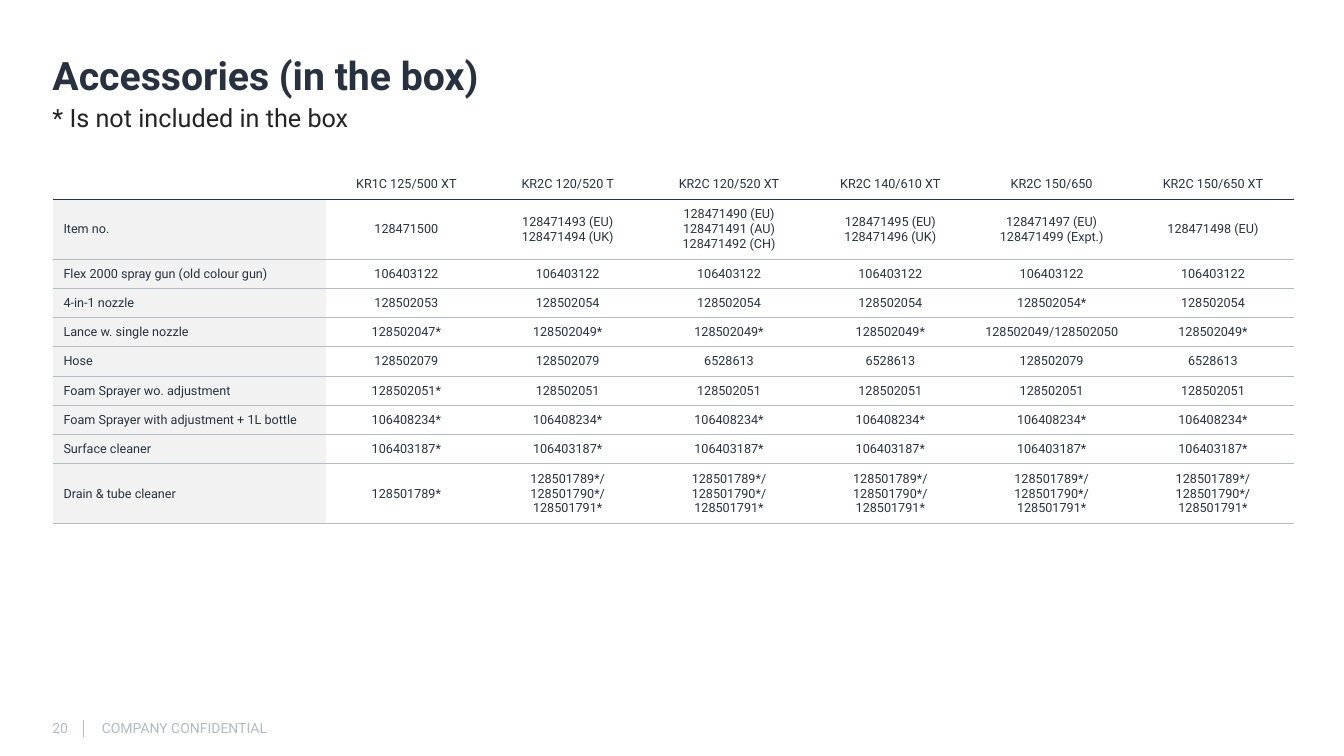
"""Build the slide listing the accessories delivered with each pressure washer."""
from dataclasses import dataclass

from lxml.etree import SubElement
from pptx import Presentation
from pptx.dml.color import RGBColor
from pptx.enum.shapes import MSO_CONNECTOR
from pptx.enum.text import MSO_ANCHOR, PP_ALIGN
from pptx.oxml.ns import qn
from pptx.util import Inches, Pt

TITLE = "Accessories (in the box)"
SUBTITLE = "* Is not included in the box"
PAGE = "20"
FOOTER = "COMPANY CONFIDENTIAL"

MODELS = ["KR1C 125/500 XT", "KR2C 120/520 T", "KR2C 120/520 XT",
          "KR2C 140/610 XT", "KR2C 150/650", "KR2C 150/650 XT"]
DRAIN_SET = "128501789*/\n128501790*/\n128501791*"
ACCESSORIES = [
    ("Item no.", ["128471500", "128471493 (EU)\n128471494 (UK)",
                  "128471490 (EU)\n128471491 (AU)\n128471492 (CH)",
                  "128471495 (EU)\n128471496 (UK)",
                  "128471497 (EU)\n128471499 (Expt.)", "128471498 (EU)"]),
    ("Flex 2000 spray gun (old colour gun)", ["106403122"] * 6),
    ("4-in-1 nozzle", ["128502053", "128502054", "128502054",
                       "128502054", "128502054*", "128502054"]),
    ("Lance w. single nozzle", ["128502047*", "128502049*", "128502049*",
                                "128502049*", "128502049/128502050", "128502049*"]),
    ("Hose", ["128502079", "128502079", "6528613", "6528613", "128502079", "6528613"]),
    ("Foam Sprayer wo. adjustment", ["128502051*"] + ["128502051"] * 5),
    ("Foam Sprayer with adjustment + 1L bottle", ["106408234*"] * 6),
    ("Surface cleaner", ["106403187*"] * 6),
    ("Drain & tube cleaner", ["128501789*"] + [DRAIN_SET] * 5),
]


@dataclass(frozen=True)
class Theme:
    """Colours, font and type sizes."""
    font: str = "Roboto"
    dark: str = "28313F"
    text: str = "242424"
    muted: str = "B3BBC5"
    label: str = "F2F2F2"
    title_size: int = 28
    subtitle_size: int = 18
    footer_size: int = 10
    table_size: int = 9


THEME = Theme()
NO_STYLE = "{2D5ABB26-0587-4C30-8999-92F81FD0307C}"
LEFT, TABLE_LEFT, TABLE_TOP = 0.52, 0.53, 1.68
LABEL_WIDTH, MODEL_WIDTH = 2.7, 1.6
HEADER_HEIGHT, LINE_HEIGHT, PADDING = 0.3, 0.14, 0.07


def write(tf, text, *, size, color, bold=False, align=PP_ALIGN.LEFT,
          spacing=None, after=None):
    """Fill a text frame, one paragraph for each line of text."""
    for i, line in enumerate(text.split("\n")):
        p = tf.paragraphs[0] if i == 0 else tf.add_paragraph()
        p.alignment = align
        if spacing:
            p.line_spacing = spacing
        if after:
            p.space_after = after
        if not line:
            SubElement(p._p, qn("a:endParaRPr"), sz=str(size * 100))
            continue
        r = p.add_run()
        r.text = line
        r.font.name = THEME.font
        r.font.size = Pt(size)
        r.font.bold = bold
        r.font.color.rgb = RGBColor.from_string(color)


def add_text(s, text, box, anchor=MSO_ANCHOR.TOP, **fmt):
    """Add a text box without insets."""
    tf = s.shapes.add_textbox(*map(Inches, box)).text_frame
    tf.word_wrap = True
    tf.vertical_anchor = anchor
    tf.margin_left = tf.margin_right = tf.margin_top = tf.margin_bottom = 0
    write(tf, text, **fmt)


def set_border(cell, side, color):
    """Draw a one-point border on one side of a cell."""
    ln = SubElement(cell._tc.get_or_add_tcPr(), qn(f"a:{side}"), w=str(Pt(1)))
    fill = SubElement(ln, qn("a:solidFill"))
    SubElement(fill, qn("a:srgbClr"), val=color)


def add_accessories(s):
    """Add the table of item numbers by accessory and model."""
    rows = [("", MODELS), *ACCESSORIES]
    heights = [HEADER_HEIGHT] + [
        2 * PADDING + LINE_HEIGHT * max(v.count("\n") + 1 for v in values)
        for _, values in ACCESSORIES]
    widths = [LABEL_WIDTH] + [MODEL_WIDTH] * len(MODELS)
    frame = s.shapes.add_table(len(rows), len(widths), Inches(TABLE_LEFT), Inches(TABLE_TOP),
                               Inches(sum(widths)), Inches(sum(heights)))
    table = frame.table
    table.first_row = table.horz_banding = False
    table._tbl.tblPr.find(qn("a:tableStyleId")).text = NO_STYLE
    for column, width in zip(table.columns, widths):
        column.width = Inches(width)
    for i, (label, values) in enumerate(rows):
        table.rows[i].height = Inches(heights[i])
        for j, text in enumerate([label, *values]):
            cell = table.cell(i, j)
            is_label = i > 0 and j == 0
            cell.vertical_anchor = MSO_ANCHOR.MIDDLE
            cell.margin_top = cell.margin_bottom = Inches(PADDING)
            cell.margin_left = cell.margin_right = Inches(0.1 if is_label else PADDING)
            write(cell.text_frame, text, size=THEME.table_size, color=THEME.dark,
                  align=PP_ALIGN.LEFT if is_label else PP_ALIGN.CENTER)
            if i > 0:
                set_border(cell, "lnT", THEME.dark if i == 1 else THEME.muted)
            set_border(cell, "lnB", THEME.dark if i == 0 else THEME.muted)
            if is_label:
                cell.fill.solid()
                cell.fill.fore_color.rgb = RGBColor.from_string(THEME.label)
            else:
                cell.fill.background()


def add_footer(s):
    """Add the page number, divider and confidentiality note."""
    line = s.shapes.add_connector(MSO_CONNECTOR.STRAIGHT, Inches(0.83), Inches(7.14),
                                  Inches(0.83), Inches(7.31))
    line.line.color.rgb = RGBColor.from_string(THEME.muted)
    line.line.width = Pt(0.25)
    SubElement(line._element.spPr, qn("a:effectLst"))
    for text, left, width in [(PAGE, LEFT, 0.3), (FOOTER, 1.01, 2.28)]:
        add_text(s, text, (left, 7.14, width, 0.17), anchor=MSO_ANCHOR.MIDDLE,
                 size=THEME.footer_size, color=THEME.muted)


def main():
    """Build and save the slide."""
    prs = Presentation()
    prs.slide_width, prs.slide_height = Inches(13.33), Inches(7.5)
    s = prs.slides.add_slide(prs.slide_layouts[6])
    add_footer(s)
    add_text(s, SUBTITLE, (LEFT, 0.96, 12.29, 0.41), size=THEME.subtitle_size,
             color=THEME.text, spacing=1.2)
    add_text(s, TITLE, (LEFT, 0.54, 12.28, 0.42), size=THEME.title_size,
             color=THEME.dark, bold=True, spacing=Pt(31), after=Pt(4))
    add_accessories(s)
    prs.save("out.pptx")


if __name__ == "__main__":
    main()
